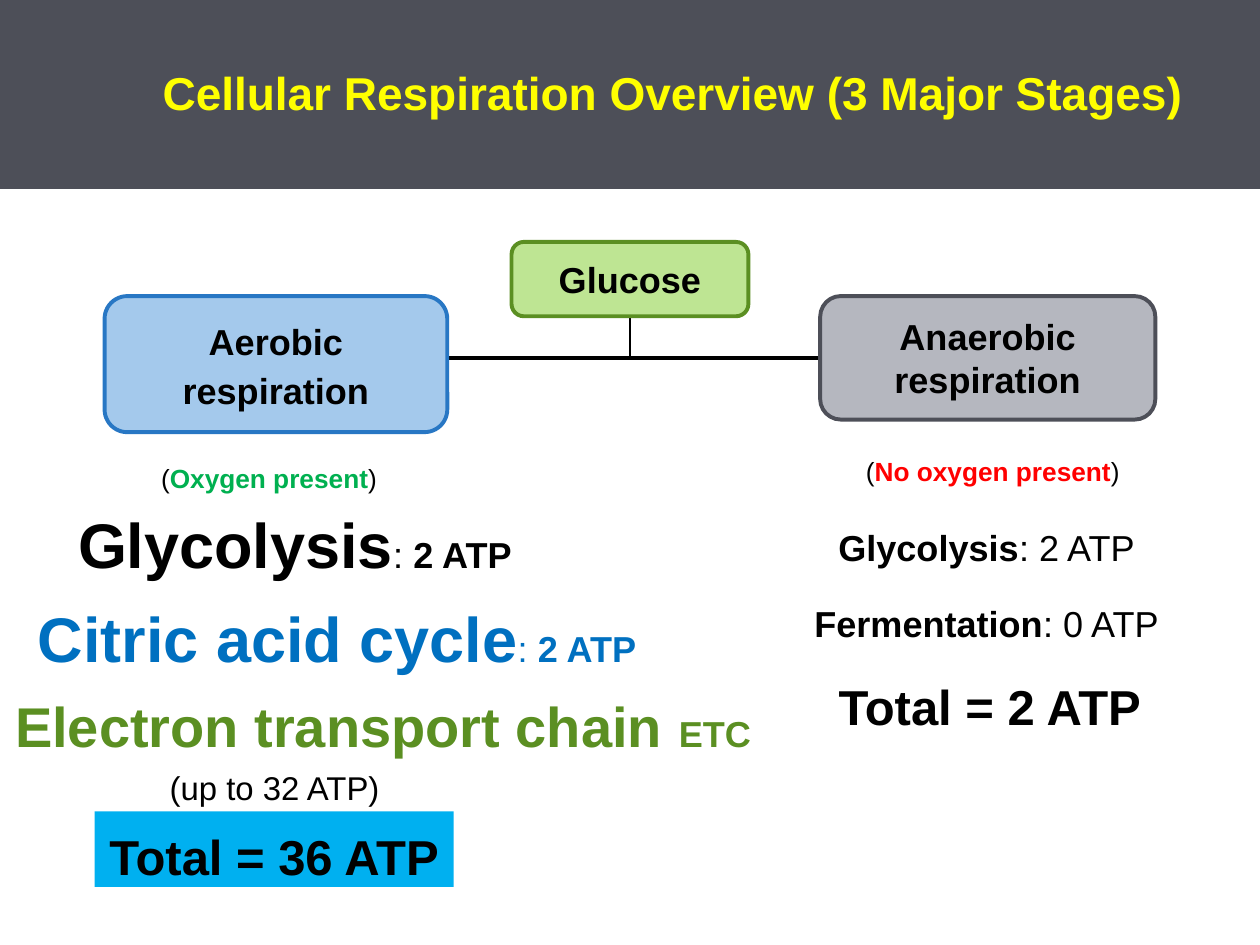
from lxml.etree import SubElement
from pptx import Presentation
from pptx.dml.color import RGBColor
from pptx.enum.shapes import MSO_CONNECTOR as Connector, MSO_SHAPE as Shape
from pptx.enum.text import MSO_ANCHOR as Anchor, PP_ALIGN as Align
from pptx.oxml.ns import qn
from pptx.util import Inches, Pt

COLORS = {
    "text": "000000", "slate": "4D4F58", "gray": "B5B7BF", "yellow": "FFFF00",
    "green": "5B8F22", "light_green": "BEE593", "blue": "2877C4",
    "light_blue": "A4C9EC", "cycle": "0070C0", "oxygen": "00B050",
    "no_oxygen": "FF0000", "total": "00B0F0",
}
LABEL = 20.6
TOTAL = 28


def color(name):
    return RGBColor.from_string(COLORS[name])


def write(shape, *runs, align=Align.CENTER, anchor=Anchor.TOP, wrap=False,
          spacing=1.0, before=0, insets=(0.1, 0.05, 0.1, 0.05)):
    """Fill a shape with one paragraph of (text, size, color, bold) runs."""
    frame = shape.text_frame
    frame.word_wrap = wrap
    frame.vertical_anchor = anchor
    (frame.margin_left, frame.margin_top,
     frame.margin_right, frame.margin_bottom) = map(Inches, insets)
    paragraph = frame.paragraphs[0]
    paragraph.alignment = align
    paragraph.line_spacing = spacing
    paragraph.space_before = Pt(before)
    for text, size, ink, bold in runs:
        run = paragraph.add_run()
        run.text = text
        font = run.font
        font.name, font.size, font.bold = "Arial", Pt(size), bold
        font.color.rgb = color(ink)


def add_header(slide, box):
    title = slide.shapes.title
    title.left, title.top, title.width, title.height = map(Inches, box)
    title.fill.solid()
    title.fill.fore_color.rgb = color("slate")
    write(title, ("Cellular Respiration Overview (3 Major Stages)", 26.3, "yellow", True),
          align=Align.LEFT, anchor=Anchor.MIDDLE, wrap=True, spacing=0.95,
          insets=(1.29, 0.07, 0.17, 0.07))


def add_branch(slide, start, end, weight):
    branch = slide.shapes.add_connector(Connector.STRAIGHT, *map(Inches, start + end))
    branch.line.color.rgb = color("text")
    branch.line.width = Pt(weight)
    SubElement(branch._element.spPr, qn("a:effectLst"))


def add_block(slide, kind, box, fill, outline=None):
    block = slide.shapes.add_shape(kind, *map(Inches, box))
    block.shadow.inherit = False
    block.fill.solid()
    block.fill.fore_color.rgb = color(fill)
    if outline:
        block.line.color.rgb = color(outline)
        block.line.width = Pt(2.25)
    else:
        block.line.fill.background()
    return block


def add_node(slide, box, label, fill, outline, **text_format):
    node = add_block(slide, Shape.ROUNDED_RECTANGLE, box, fill, outline)
    write(node, (label, LABEL, "text", True), wrap=True,
          insets=(0.19, 0.09, 0.19, 0.09), **{"anchor": Anchor.MIDDLE, **text_format})


def add_tree(slide, box):
    """Glucose splitting into its two respiration paths."""
    left, top, width, _ = box
    right = left + width
    aerobic_width, anaerobic_width, glucose_width = 2.72, 2.66, 1.88
    node_top, branch_y, center = top + 0.43, top + 0.92, 5
    glucose_height = 0.59
    add_branch(slide, (center, top + glucose_height), (center, branch_y), 1.5)
    add_branch(slide, (left + aerobic_width, branch_y),
               (right - anaerobic_width, branch_y), 2)
    add_node(slide, (center - glucose_width / 2, top, glucose_width, glucose_height),
             "Glucose", "light_green", "green")
    add_node(slide, (right - anaerobic_width, node_top, anaerobic_width, 0.98),
             "Anaerobic respiration", "gray", "slate")
    add_node(slide, (left, node_top, aerobic_width, 1.08),
             "Aerobic respiration", "light_blue", "blue",
             anchor=Anchor.TOP, spacing=1.13, before=4.5)


def add_stage(slide, box, *runs, fill=None):
    if fill:
        stage = add_block(slide, Shape.RECTANGLE, box, fill)
    else:
        stage = slide.shapes.add_textbox(*map(Inches, box))
    write(stage, *runs, spacing=1.15, before=3)


def add_condition(slide, box, label, ink):
    add_stage(slide, box, ("(", 15, "text", False), (label, 15, ink, True),
              (")", 15, "text", False))


def add_aerobic_stages(slide, left, top):
    add_condition(slide, (left + 1.17, top, 1.93, 0.39), "Oxygen present", "oxygen")
    for x, y, width, name, ink in (
        (0.5, 0.29, 3.68, "Glycolysis", "text"),
        (0.18, 1.04, 4.99, "Citric acid cycle", "cycle"),
    ):
        add_stage(slide, (left + x, top + y, width, 0.74), (name, 36, ink, True),
                  (": ", LABEL, ink, False), ("2 ATP", LABEL, ink, True))
    add_stage(slide, (left, top + 1.78, 6.08, 0.72),
              ("Electron transport chain ", 32, "green", True),
              ("ETC", LABEL, "green", True))
    add_stage(slide, (left + 1.24, top + 2.42, 1.88, 0.46),
              ("(up to 32 ATP)", 18.8, "text", False))
    add_stage(slide, (left + 0.75, top + 2.86, 2.85, 0.6),
              ("Total = 36 ATP", TOTAL, "text", True), fill="total")


def add_anaerobic_stages(slide, left, top):
    add_condition(slide, (left + 0.72, top, 2.24, 0.39), "No oxygen present", "no_oxygen")
    for x, y, width, name, amount in (
        (0.5, 0.54, 2.58, "Glycolysis", ": 2 ATP"),
        (0, 1.14, 3.58, "Fermentation", ": 0 ATP"),
    ):
        add_stage(slide, (left + x, top + y, width, 0.5),
                  (name, LABEL, "text", True), (amount, LABEL, "text", False))
    add_stage(slide, (left + 0.5, top + 1.72, 2.63, 0.6),
              ("Total = 2 ATP", TOTAL, "text", True))


def main():
    deck = Presentation()
    deck.slide_width, deck.slide_height = Inches(10), Inches(7.5)
    slide = deck.slides.add_slide(deck.slide_layouts[5])
    add_header(slide, (0, 0, 10, 1.5))
    add_tree(slide, (0.83, 1.92, 8.34, 1.51))
    add_aerobic_stages(slide, 0, 3.58)
    add_anaerobic_stages(slide, 6.04, 3.53)
    deck.save("out.pptx")


if __name__ == "__main__":
    main()
